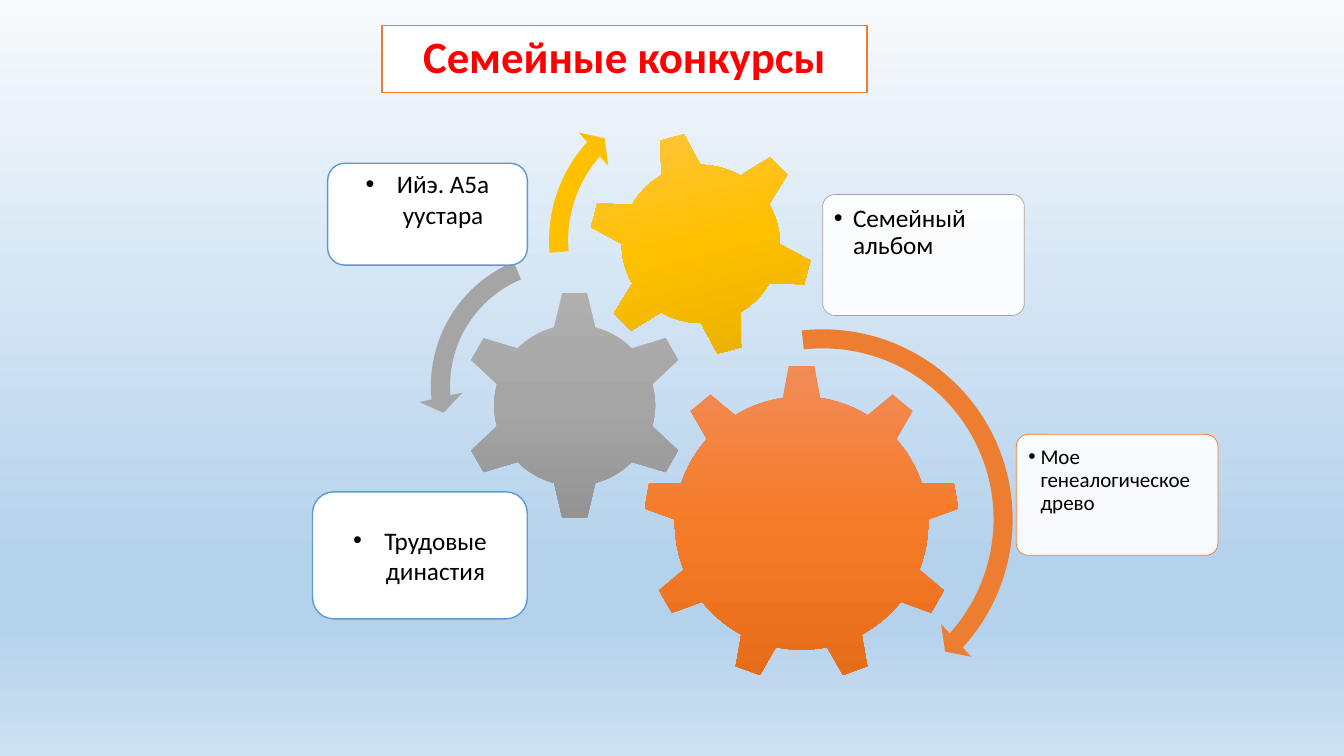
import pptx
import pptx.dml.color
import pptx.enum.shapes
import pptx.enum.text
import pptx.oxml.ns
import pptx.util
from lxml import etree

Inches = pptx.util.Inches
Pt = pptx.util.Pt
qn = pptx.oxml.ns.qn
PRESET = pptx.enum.shapes.MSO_SHAPE
ANCHOR = pptx.enum.text.MSO_ANCHOR
ALIGN = pptx.enum.text.PP_ALIGN


def color(hex_code):
    return pptx.dml.color.RGBColor.from_string(hex_code)


class FamilyContestSlide:
    """Holds the style and the current slide, and draws each kind of element."""

    FONT = "Calibri"
    TEXT = "000000"
    PANEL = "FFFFFF"

    def __init__(self, deck):
        self.slide = deck.slides.add_slide(deck.slide_layouts[5])
        self.shapes = self.slide.shapes

    def gradient(self, fill, element, stops):
        fill.gradient()
        fill.gradient_angle = 270
        stop_list = next(element.iter(qn("a:gsLst")))
        for stop in list(stop_list):
            stop_list.remove(stop)
        for position, hex_code in stops:
            stop = etree.SubElement(stop_list, qn("a:gs"), pos=str(position * 1000))
            etree.SubElement(stop, qn("a:srgbClr"), val=hex_code)

    def background(self, stops):
        self.gradient(self.slide.background.fill, self.slide.element, stops)

    def outline(self, shape, hex_code, width):
        shape.fill.solid()
        shape.fill.fore_color.rgb = color(self.PANEL)
        shape.line.color.rgb = color(hex_code)
        shape.line.width = Pt(width)

    def add_text(self, paragraph, text, size, hex_code, bold=False):
        run = paragraph.add_run()
        run.text = text
        run.font.name = self.FONT
        run.font.size = Pt(size)
        run.font.bold = bold
        run.font.color.rgb = color(hex_code)

    def bullet(self, paragraph, indent):
        props = paragraph._p.get_or_add_pPr()
        props.set("marL", str(Inches(indent)))
        props.set("indent", str(-Inches(indent)))
        etree.SubElement(props, qn("a:buFont"), typeface="Arial")
        etree.SubElement(props, qn("a:buChar"), char="•")

    def title(self, text, left, top, width, height):
        heading = self.shapes.title
        heading.left, heading.top = Inches(left), Inches(top)
        heading.width, heading.height = Inches(width), Inches(height)
        self.outline(heading, "ED7D31", 1)
        heading.text_frame.vertical_anchor = ANCHOR.MIDDLE
        paragraph = heading.text_frame.paragraphs[0]
        paragraph.alignment = ALIGN.CENTER
        paragraph.line_spacing = 0.9
        self.add_text(paragraph, text, 32, "FF0000", True)

    def preset(self, kind, left, top, width, height):
        shape = self.shapes.add_shape(
            kind, Inches(left), Inches(top), Inches(width), Inches(height))
        shape.shadow.inherit = False
        return shape

    def gear(self, kind, left, top, size, shades, rotation=0):
        gear = self.preset(kind, left, top, size, size)
        gear.rotation = rotation
        gear.line.fill.background()
        self.gradient(gear.fill, gear._element, zip((0, 50, 100), shades))

    def turn(self, kind, left, top, size, hex_code, adjustments):
        arrow = self.preset(kind, left, top, size, size)
        arrow.fill.solid()
        arrow.fill.fore_color.rgb = color(hex_code)
        arrow.line.fill.background()
        for index, value in enumerate(adjustments):
            arrow.adjustments[index] = value

    def gear_label(self, text, left, top, hex_code, size, indent, inset):
        width, height, margin = 2, 1.2, 0.04
        panel = self.preset(PRESET.ROUNDED_RECTANGLE, left, top, width, height)
        panel.adjustments[0] = 0.1
        self.outline(panel, hex_code, 0.5)
        tint = panel._element.spPr.find(qn("a:solidFill"))[0]
        etree.SubElement(tint, qn("a:alpha"), val="90000")
        caption = self.shapes.add_textbox(
            Inches(left + margin), Inches(top + margin),
            Inches(width - 2 * margin), Inches(height - 2 * margin))
        frame = caption.text_frame
        frame.word_wrap = True
        frame.margin_left = frame.margin_right = Inches(inset)
        frame.margin_top = frame.margin_bottom = Inches(inset)
        paragraph = frame.paragraphs[0]
        paragraph.line_spacing = 0.9
        self.bullet(paragraph, indent)
        self.add_text(paragraph, text, size, self.TEXT)

    def side_label(self, text, left, top, width, height, bottom=0.05):
        panel = self.preset(PRESET.ROUNDED_RECTANGLE, left, top, width, height)
        self.outline(panel, "5B9BD5", 1)
        frame = panel.text_frame
        frame.word_wrap = True
        frame.vertical_anchor = ANCHOR.MIDDLE
        frame.margin_bottom = Inches(bottom)
        paragraph = frame.paragraphs[0]
        paragraph.alignment = ALIGN.CENTER
        self.bullet(paragraph, 0.31)
        self.add_text(paragraph, text, 18, self.TEXT)


def main():
    deck = pptx.Presentation()
    deck.slide_width, deck.slide_height = Inches(13.33), Inches(7.5)
    page = FamilyContestSlide(deck)
    page.background([(0, "F7FAFD"), (74, "B5D2EC"), (83, "B5D2EC"), (100, "CEE1F2")])
    page.title("Семейные конкурсы", 3.79, 0.25, 4.81, 0.67)

    page.gear(PRESET.GEAR_9, 6.38, 3.62, 3.14, ("F18C57", "F67B28", "E56C19"))
    page.gear_label("Мое генеалогическое древо", 10.08, 4.31, "ED7D31", 15, 0.12, 0.08)
    page.gear(PRESET.GEAR_6, 4.56, 2.88, 2.28, ("AFAFAF", "A5A5A5", "939393"))
    page.gear(PRESET.GEAR_6, 5.83, 1.3, 2.24, ("FFC64B", "FFC000", "E3AB00"), 345)
    page.gear_label("Семейный альбом", 8.16, 1.93, "A5A5A5", 18, 0.19, 0.07)

    page.turn(PRESET.CIRCULAR_ARROW, 6.15, 3.14, 4.02, "ED7D31",
              (0.047, 2.99, 25.362, 158.188, 0.055))
    page.turn(PRESET.LEFT_CIRCULAR_ARROW, 4.15, 2.37, 2.92, "A5A5A5",
              (0.065, 4.3, 104.891, 148.378, 0.075))
    page.turn(PRESET.CIRCULAR_ARROW, 5.32, 0.81, 3.15, "FFC000",
              (0.06, 3.941, 133.138, 105.082, 0.07))

    page.side_label("Ийэ. А5а уустара", 3.25, 1.62, 1.98, 1.01, bottom=0.35)
    page.side_label("Трудовые династия", 3.1, 4.88, 2.13, 1.26)
    deck.save("out.pptx")


if __name__ == "__main__":
    main()
